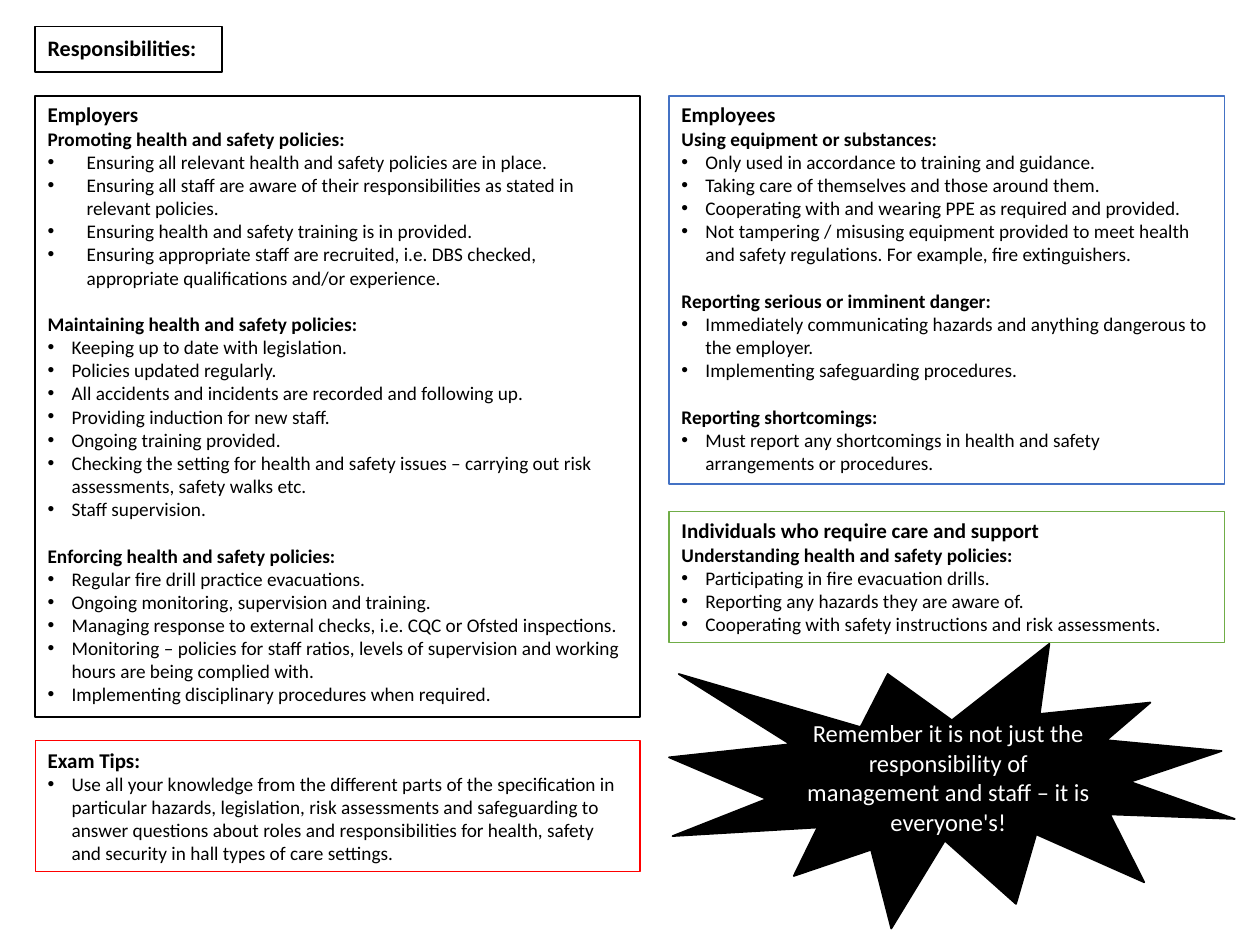
from lxml import etree
from pptx import Presentation
from pptx.dml.color import RGBColor
from pptx.enum.shapes import MSO_SHAPE
from pptx.enum.text import MSO_ANCHOR, MSO_AUTO_SIZE, PP_ALIGN
from pptx.oxml.ns import qn
from pptx.util import Inches, Pt

RECTANGLE = MSO_SHAPE.RECTANGLE
EXPLOSION = MSO_SHAPE.EXPLOSION1
TOP, MIDDLE = MSO_ANCHOR.TOP, MSO_ANCHOR.MIDDLE
LEFT, CENTER = PP_ALIGN.LEFT, PP_ALIGN.CENTER
GROW = MSO_AUTO_SIZE.SHAPE_TO_FIT_TEXT

BLACK = RGBColor(0x00, 0x00, 0x00)
WHITE = RGBColor(0xFF, 0xFF, 0xFF)
BLUE = RGBColor(0x44, 0x72, 0xC4)
GREEN = RGBColor(0x70, 0xAD, 0x47)
RED = RGBColor(0xFF, 0x00, 0x00)

FONT = "Calibri"
HEADING_SIZE = 12
BODY_SIZE = 11
SECTION_GAP = 13.4
INDENT = 0.19
WIDE_INDENT = 0.31

LEFT_COLUMN, LEFT_WIDTH = 0.28, 4.8
RIGHT_COLUMN, RIGHT_WIDTH = 5.31, 4.41
COLUMN_TOP = 0.76

EMPLOYERS = [
    ("Promoting health and safety policies:", WIDE_INDENT, [
        "Ensuring all relevant health and safety policies are in place.",
        "Ensuring all staff are aware of their responsibilities as stated in relevant policies.",
        "Ensuring health and safety training is in provided.",
        "Ensuring appropriate staff are recruited, i.e. DBS checked, "
        "appropriate qualifications and/or experience.",
    ]),
    ("Maintaining health and safety policies:", INDENT, [
        "Keeping up to date with legislation.",
        "Policies updated regularly.",
        "All accidents and incidents are recorded and following up.",
        "Providing induction for new staff.",
        "Ongoing training provided.",
        "Checking the setting for health and safety issues – carrying out risk "
        "assessments, safety walks etc.",
        "Staff supervision.",
    ]),
    ("Enforcing health and safety policies:", INDENT, [
        "Regular fire drill practice evacuations.",
        "Ongoing monitoring, supervision and training.",
        "Managing response to external checks, i.e. CQC or Ofsted inspections.",
        "Monitoring – policies for staff ratios, levels of supervision and working "
        "hours are being complied with.",
        "Implementing disciplinary procedures when required.",
    ]),
]
EMPLOYEES = [
    ("Using equipment or substances:", INDENT, [
        "Only used in accordance to training and guidance.",
        "Taking care of themselves and those around them.",
        "Cooperating with and wearing PPE as required and provided.",
        "Not tampering / misusing equipment provided to meet health and safety "
        "regulations. For example, fire extinguishers.",
    ]),
    ("Reporting serious or imminent danger:", INDENT, [
        "Immediately communicating hazards and anything dangerous to the employer.",
        "Implementing safeguarding procedures.",
    ]),
    ("Reporting shortcomings:", INDENT, [
        "Must report any shortcomings in health and safety arrangements or procedures.",
    ]),
]
INDIVIDUALS = [
    ("Understanding health and safety policies:", INDENT, [
        "Participating in fire evacuation drills.",
        "Reporting any hazards they are aware of.",
        "Cooperating with safety instructions and risk assessments.",
    ]),
]
EXAM_TIPS = [
    (None, INDENT, [
        "Use all your knowledge from the different parts of the specification in "
        "particular hazards, legislation, risk assessments and safeguarding to answer "
        "questions about roles and responsibilities for health, safety and security "
        "in hall types of care settings.",
    ]),
]


def add_box(slide, kind, box, fill, line, line_width=1, anchor=MIDDLE):
    shape = slide.shapes.add_shape(kind, *(Inches(length) for length in box))
    shape.shadow.inherit = False
    if fill is None:
        shape.fill.background()
    else:
        shape.fill.solid()
        shape.fill.fore_color.rgb = fill
    shape.line.color.rgb = line
    shape.line.width = Pt(line_width)
    shape.text_frame.word_wrap = True
    shape.text_frame.vertical_anchor = anchor
    return shape


def write_text(paragraph, text, size, bold=False, color=BLACK, alignment=LEFT):
    paragraph.alignment = alignment
    run = paragraph.add_run()
    run.text = text
    run.font.name = FONT
    run.font.size = Pt(size)
    run.font.bold = bold
    run.font.color.rgb = color


def add_bullet(paragraph, indent):
    properties = paragraph._p.get_or_add_pPr()
    properties.set("marL", str(Inches(indent)))
    properties.set("indent", str(-Inches(indent)))
    etree.SubElement(properties, qn("a:buFont"), typeface="Arial")
    etree.SubElement(properties, qn("a:buChar"), char="•")


def add_panel(slide, box, heading, sections, line, fill=WHITE, line_width=1):
    shape = add_box(slide, RECTANGLE, box, fill, line, line_width, TOP)
    frame = shape.text_frame
    frame.auto_size = GROW
    write_text(frame.paragraphs[0], heading, HEADING_SIZE, bold=True)
    for index, (title, indent, items) in enumerate(sections):
        if title:
            paragraph = frame.add_paragraph()
            write_text(paragraph, title, BODY_SIZE, bold=True)
            if index:
                paragraph.space_before = Pt(SECTION_GAP)
        for item in items:
            paragraph = frame.add_paragraph()
            write_text(paragraph, item, BODY_SIZE)
            add_bullet(paragraph, indent)


def add_title(slide):
    shape = add_box(slide, RECTANGLE, (LEFT_COLUMN, 0.21, 1.48, 0.36), WHITE, BLACK)
    paragraph = shape.text_frame.paragraphs[0]
    paragraph.line_spacing = 0.9
    write_text(paragraph, "Responsibilities:", 12.6, bold=True)


def add_reminder(slide):
    shape = add_box(slide, EXPLOSION, (RIGHT_COLUMN, 5.11, 4.49, 2.26), BLACK, BLACK)
    write_text(
        shape.text_frame.paragraphs[0],
        "Remember it is not just the responsibility of management and staff – "
        "it is everyone's!",
        14, color=WHITE, alignment=CENTER)


def main():
    presentation = Presentation()
    presentation.slide_width = Inches(10)
    presentation.slide_height = Inches(7.5)
    slide = presentation.slides.add_slide(presentation.slide_layouts[6])

    add_title(slide)
    add_panel(slide, (LEFT_COLUMN, COLUMN_TOP, LEFT_WIDTH, 4.93),
              "Employers", EMPLOYERS, BLACK)
    add_panel(slide, (RIGHT_COLUMN, COLUMN_TOP, RIGHT_WIDTH, 3.08),
              "Employees", EMPLOYEES, BLUE)
    add_panel(slide, (RIGHT_COLUMN, 4.06, RIGHT_WIDTH, 1.04),
              "Individuals who require care and support", INDIVIDUALS, GREEN)
    add_reminder(slide)
    add_panel(slide, (LEFT_COLUMN, 5.88, LEFT_WIDTH, 1.04),
              "Exam Tips:", EXAM_TIPS, RED, fill=None, line_width=0.75)

    presentation.save("out.pptx")


if __name__ == "__main__":
    main()
